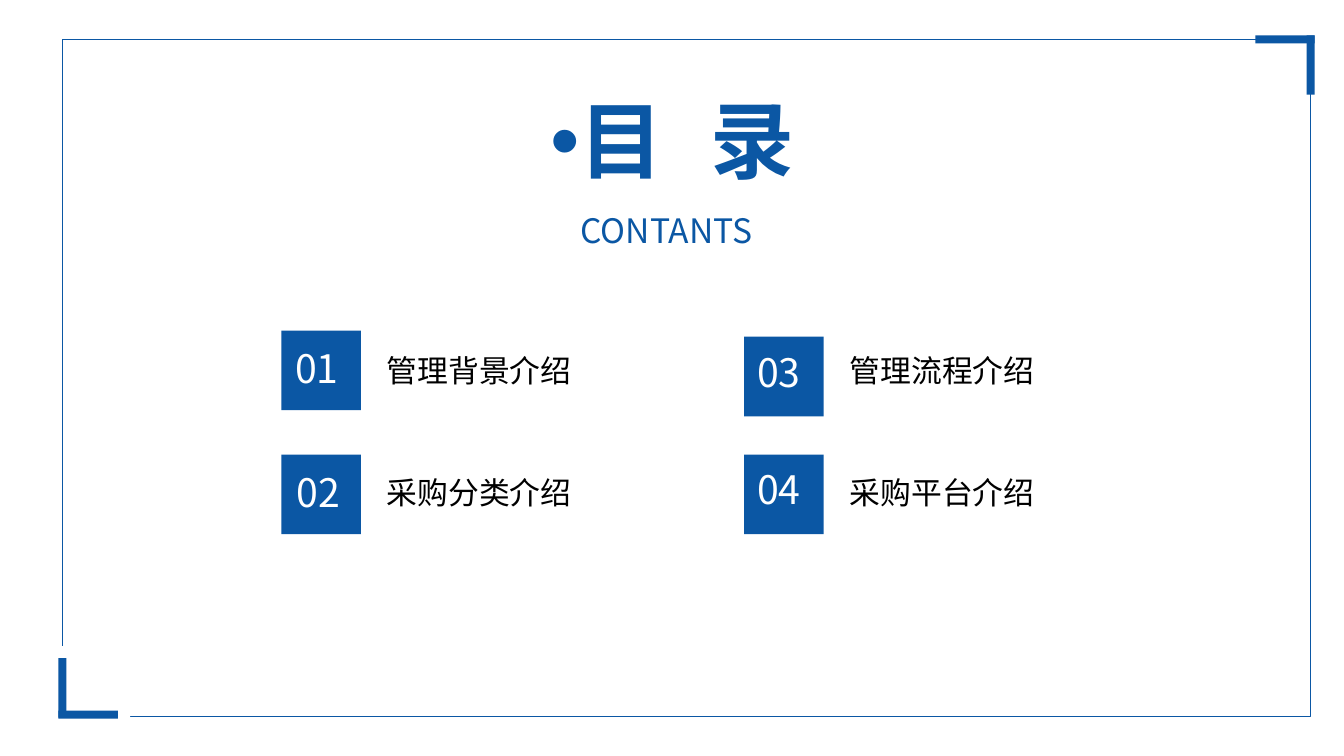
from typing import NamedTuple

from lxml.etree import SubElement
from pptx import Presentation
from pptx.dml.color import RGBColor
from pptx.enum.shapes import MSO_SHAPE
from pptx.enum.text import PP_ALIGN
from pptx.oxml.ns import qn
from pptx.util import Emu, Pt

PX = 9144  # 100 px to the inch
FONT = "Noto Sans CJK SC"
BLUE, WHITE, BLACK = "0B57A4", "FFFFFF", "000000"
TILE = 79


class Box(NamedTuple):
    x: int
    y: int
    w: int
    h: int

    def emu(self) -> list[Emu]:
        return [Emu(v * PX) for v in self]


class Bar(NamedTuple):
    box: Box
    color: str


class Entry(NamedTuple):
    number: str
    title: str
    tile_x: int
    tile_y: int
    number_x: int
    number_y: int
    title_y: int


CORNERS = [
    # Top right
    Bar(Box(1245, 35, 59, 8), BLUE),
    Bar(Box(1296, 35, 8, 59), BLUE),
    # Bottom left, on a white patch that interrupts the frame
    Bar(Box(35, 641, 94, 87), WHITE),
    Bar(Box(58, 705, 59, 8), BLUE),
    Bar(Box(58, 653, 8, 59), BLUE),
]

ENTRIES = [
    Entry("01", "管理背景介绍", 279, 328, 283, 337, 344),
    Entry("02", "采购分类介绍", 279, 451, 284, 460, 465),
    Entry("03", "管理流程介绍", 738, 334, 741, 341, 344),
    Entry("04", "采购平台介绍", 738, 451, 741, 457, 465),
]


def rgb(color: str) -> RGBColor:
    return RGBColor.from_string(color)


def add_rect(slide, box: Box, fill: str | None = None, line: str | None = None):
    sp = slide.shapes.add_shape(MSO_SHAPE.RECTANGLE, *box.emu())
    sp.shadow.inherit = False
    if fill:
        sp.fill.solid()
        sp.fill.fore_color.rgb = rgb(fill)
    else:
        sp.fill.background()
    if line:
        sp.line.color.rgb = rgb(line)
        sp.line.width = Pt(1)
    else:
        sp.line.fill.background()
    return sp


def add_text(slide, box: Box, text: str, size: int, color: str, wrap: bool = True):
    tf = slide.shapes.add_textbox(*box.emu()).text_frame
    tf.word_wrap = wrap
    p = tf.paragraphs[0]
    p.text = text
    r = p.runs[0]
    r.font.size = Pt(size)
    r.font.color.rgb = rgb(color)
    r.font.name = FONT
    SubElement(r.font._element, qn("a:ea")).set("typeface", FONT)
    return p


def add_heading(slide) -> None:
    p = add_text(slide, Box(191, 94, 952, 109), "目 录", 60, BLUE)
    p.alignment = PP_ALIGN.CENTER
    p.line_spacing = 0.9
    p.space_after = Pt(10)
    font = p.runs[0].font
    font.bold = True
    font._element.set("spc", "1000")
    # Bullet with hanging indent
    pPr = p._p.get_or_add_pPr()
    pPr.set("marL", str(25 * PX))
    pPr.set("indent", str(-25 * PX))
    SubElement(pPr, qn("a:buFont")).set("typeface", "Arial")
    SubElement(pPr, qn("a:buChar")).set("char", "•")


def add_entry(slide, e: Entry) -> None:
    add_text(slide, Box(e.tile_x + 95, e.title_y, 326, 47), e.title, 22, BLACK)
    add_rect(slide, Box(e.tile_x, e.tile_y, TILE, TILE), fill=BLUE)
    add_text(slide, Box(e.number_x, e.number_y, 71, 57), e.number, 28, WHITE)


def main() -> None:
    prs = Presentation()
    prs.slide_width, prs.slide_height = Emu(1333 * PX), Emu(750 * PX)
    slide = prs.slides.add_slide(prs.slide_layouts[6])

    # Frame and corner marks
    add_rect(slide, Box(62, 39, 1238, 672), line=BLUE)
    for bar in CORNERS:
        add_rect(slide, bar.box, fill=bar.color)

    # Heading
    add_heading(slide)
    add_text(slide, Box(566, 203, 201, 50), "CONTANTS", 24, BLUE, wrap=False)

    # Contents entries
    for entry in ENTRIES:
        add_entry(slide, entry)

    prs.save("out.pptx")


if __name__ == "__main__":
    main()
